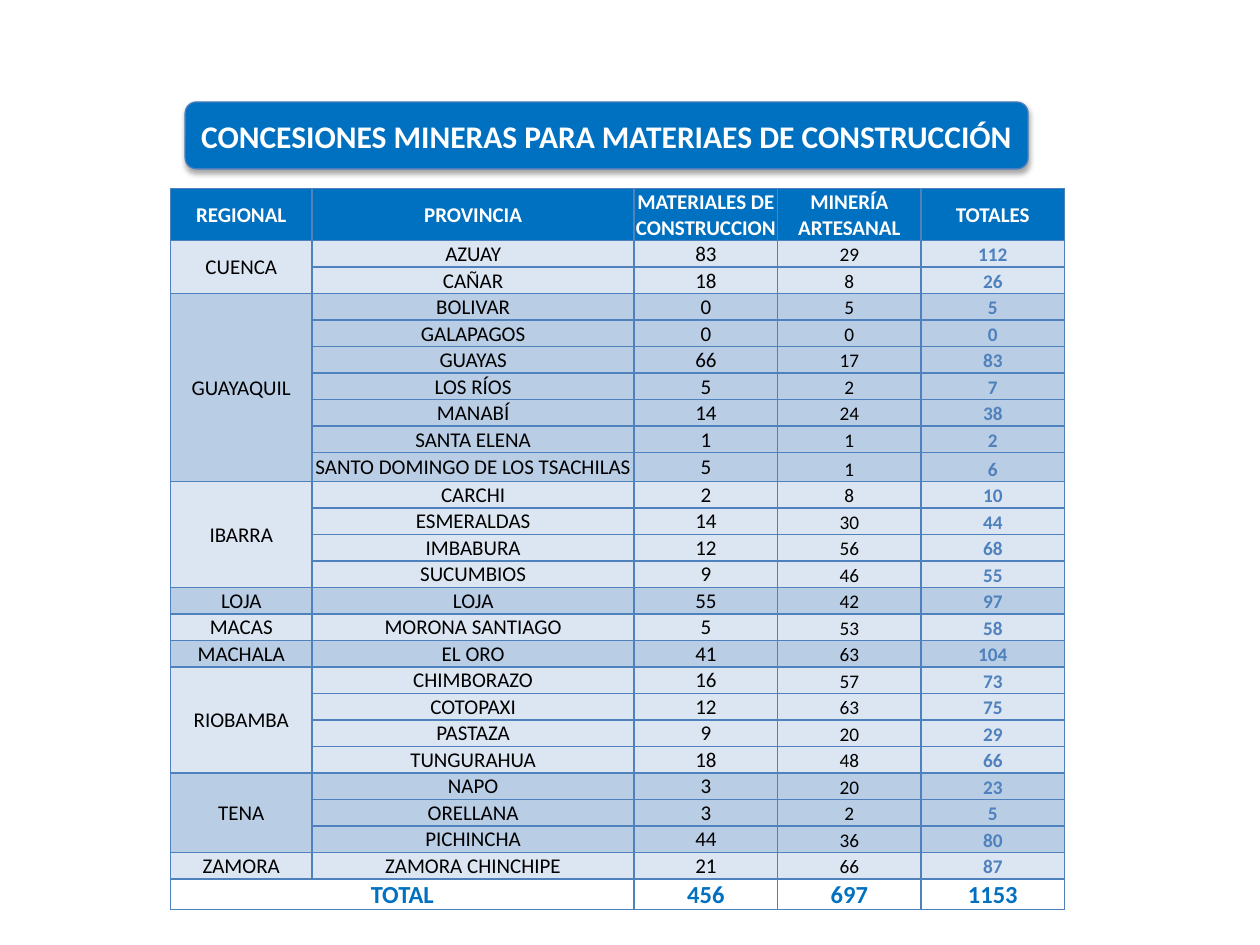
"""Builds the slide of mining concessions for construction materials by region."""
from dataclasses import dataclass
from itertools import cycle

from lxml import etree
from pptx import Presentation
from pptx.dml.color import RGBColor
from pptx.enum import shapes, text
from pptx.oxml import ns
from pptx.util import Pt

BLUE, BORDER, WHITE, BLACK = "0070C0", "4F81BD", "FFFFFF", "000000"
BANDS = ("DCE6F2", "B9CDE5")
FONT = "Calibri"
TITLE = "CONCESIONES MINERAS PARA MATERIAES DE CONSTRUCCIÓN"
HEADINGS = ("REGIONAL", "PROVINCIA", "MATERIALES DE CONSTRUCCION", "MINERÍA ARTESANAL", "TOTALES")
COLUMN_WIDTHS = (81, 184, 82, 82, 82)
HEADER_HEIGHT, ROW_HEIGHT, TALL_ROW_HEIGHT = 24.5, 13.7, 16.5
TALL_PROVINCE = "SANTO DOMINGO DE LOS TSACHILAS"
BANNER_BOX = (105.8, 58.3, 481.7, 38.2)


@dataclass(frozen=True)
class Province:
    name: str
    materials: int
    artisanal: int


@dataclass(frozen=True)
class Region:
    name: str
    provinces: tuple[Province, ...]


@dataclass(frozen=True)
class CellStyle:
    size: float
    colour: str
    bold: bool = False
    anchor: text.MSO_ANCHOR = text.MSO_ANCHOR.MIDDLE


HEADING = CellStyle(12, WHITE, True)
LABEL = CellStyle(12, BLACK)
ARTISANAL = CellStyle(11, BLACK, anchor=text.MSO_ANCHOR.BOTTOM)
ROW_TOTAL = CellStyle(11, BORDER, True, text.MSO_ANCHOR.BOTTOM)
GRAND_TOTAL = CellStyle(14, BLUE, True)

REGIONS = (
    Region("CUENCA", (Province("AZUAY", 83, 29), Province("CAÑAR", 18, 8))),
    Region("GUAYAQUIL", (
        Province("BOLIVAR", 0, 5),
        Province("GALAPAGOS", 0, 0),
        Province("GUAYAS", 66, 17),
        Province("LOS RÍOS", 5, 2),
        Province("MANABÍ", 14, 24),
        Province("SANTA ELENA", 1, 1),
        Province(TALL_PROVINCE, 5, 1),
    )),
    Region("IBARRA", (
        Province("CARCHI", 2, 8),
        Province("ESMERALDAS", 14, 30),
        Province("IMBABURA", 12, 56),
        Province("SUCUMBIOS", 9, 46),
    )),
    Region("LOJA", (Province("LOJA", 55, 42),)),
    Region("MACAS", (Province("MORONA SANTIAGO", 5, 53),)),
    Region("MACHALA", (Province("EL ORO", 41, 63),)),
    Region("RIOBAMBA", (
        Province("CHIMBORAZO", 16, 57),
        Province("COTOPAXI", 12, 63),
        Province("PASTAZA", 9, 20),
        Province("TUNGURAHUA", 18, 48),
    )),
    Region("TENA", (
        Province("NAPO", 3, 20),
        Province("ORELLANA", 3, 2),
        Province("PICHINCHA", 44, 36),
    )),
    Region("ZAMORA", (Province("ZAMORA CHINCHIPE", 21, 66),)),
)


def rgb(colour: str) -> RGBColor:
    """Turn a hex string into a colour."""
    return RGBColor.from_string(colour)


def add_element(parent, tag: str, **attributes):
    """Append a DrawingML element to a parent."""
    return etree.SubElement(parent, ns.qn(tag), attributes)


def format_paragraph(paragraph, size: float, colour: str, bold: bool) -> None:
    """Centre a paragraph and set its font."""
    paragraph.alignment = text.PP_ALIGN.CENTER
    font = paragraph.font
    font.name, font.size, font.bold = FONT, Pt(size), bold
    font.color.rgb = rgb(colour)


def fill_cell(cell, content: object, style: CellStyle, fill: str | None) -> None:
    """Write and format one table cell with its borders."""
    cell.text = str(content)
    cell.vertical_anchor = style.anchor
    cell.margin_left = cell.margin_right = cell.margin_top = Pt(0.5)
    cell.margin_bottom = Pt(0)
    format_paragraph(cell.text_frame.paragraphs[0], style.size, style.colour, style.bold)
    properties = cell._tc.get_or_add_tcPr()
    for side in ("a:lnL", "a:lnR", "a:lnT", "a:lnB"):
        line = add_element(properties, side, w=str(Pt(1)))
        add_element(add_element(line, "a:solidFill"), "a:srgbClr", val=BORDER)
    if fill:
        cell.fill.solid()
        cell.fill.fore_color.rgb = rgb(fill)
    else:
        cell.fill.background()


def fill_row(table, row: int, contents: tuple, styles: tuple, fill: str | None) -> None:
    """Write one row of the table."""
    for column, (content, style) in enumerate(zip(contents, styles)):
        fill_cell(table.cell(row, column), content, style, fill)


def add_concessions(slide) -> None:
    """Draw the table of concessions with its totals."""
    provinces = [province for region in REGIONS for province in region.provinces]
    heights = [HEADER_HEIGHT]
    heights += [TALL_ROW_HEIGHT if p.name == TALL_PROVINCE else ROW_HEIGHT for p in provinces]
    heights.append(ROW_HEIGHT)
    table = slide.shapes.add_table(
        len(heights), len(HEADINGS), Pt(97.4), Pt(107.8), Pt(sum(COLUMN_WIDTHS)), Pt(sum(heights))
    ).table
    table.first_row = table.horz_banding = False
    for column, width in zip(table.columns, COLUMN_WIDTHS):
        column.width = Pt(width)
    for table_row, height in zip(table.rows, heights):
        table_row.height = Pt(height)

    fill_row(table, 0, HEADINGS, (HEADING,) * len(HEADINGS), BLUE)
    row = 1
    styles = (LABEL, LABEL, LABEL, ARTISANAL, ROW_TOTAL)
    for region, band in zip(REGIONS, cycle(BANDS)):
        first = row
        for p in region.provinces:
            name = region.name if row == first else ""
            values = (name, p.name, p.materials, p.artisanal, p.materials + p.artisanal)
            fill_row(table, row, values, styles, band)
            row += 1
        if row - first > 1:
            table.cell(first, 0).merge(table.cell(row - 1, 0))

    materials = sum(p.materials for p in provinces)
    artisanal = sum(p.artisanal for p in provinces)
    totals = ("TOTAL", "", materials, artisanal, materials + artisanal)
    fill_row(table, row, totals, (GRAND_TOTAL,) * len(totals), None)
    table.cell(row, 0).merge(table.cell(row, 1))


def add_banner(slide) -> None:
    """Draw the rounded banner and set the title on it."""
    box = [Pt(length) for length in BANNER_BOX]
    banner = slide.shapes.add_shape(shapes.MSO_SHAPE.ROUNDED_RECTANGLE, *box)
    banner.fill.solid()
    banner.fill.fore_color.rgb = rgb(BLUE)
    banner.line.color.rgb = rgb("4B7EBC")
    banner.line.width = Pt(0.75)
    banner.shadow.inherit = False
    effects = banner._element.spPr.find(ns.qn("a:effectLst"))
    shadow = add_element(effects, "a:outerShdw", blurRad=str(Pt(3.1)), dist=str(Pt(1.8)),
                         dir="5400000", rotWithShape="0")
    add_element(add_element(shadow, "a:srgbClr", val=BLACK), "a:alpha", val="35000")

    title = slide.shapes.title
    title.left, title.top, title.width, title.height = box
    frame = title.text_frame
    frame.text = TITLE
    frame.word_wrap = True
    frame.auto_size = text.MSO_AUTO_SIZE.NONE
    frame.vertical_anchor = text.MSO_ANCHOR.MIDDLE
    frame.margin_left = frame.margin_right = Pt(0)
    format_paragraph(frame.paragraphs[0], 18, WHITE, True)
    banner._element.addnext(title._element)


def main() -> None:
    """Build and save the slide."""
    presentation = Presentation()
    presentation.slide_width, presentation.slide_height = Pt(720), Pt(540)
    slide = presentation.slides.add_slide(presentation.slide_layouts[5])
    add_concessions(slide)
    add_banner(slide)
    presentation.save("out.pptx")


if __name__ == "__main__":
    main()
